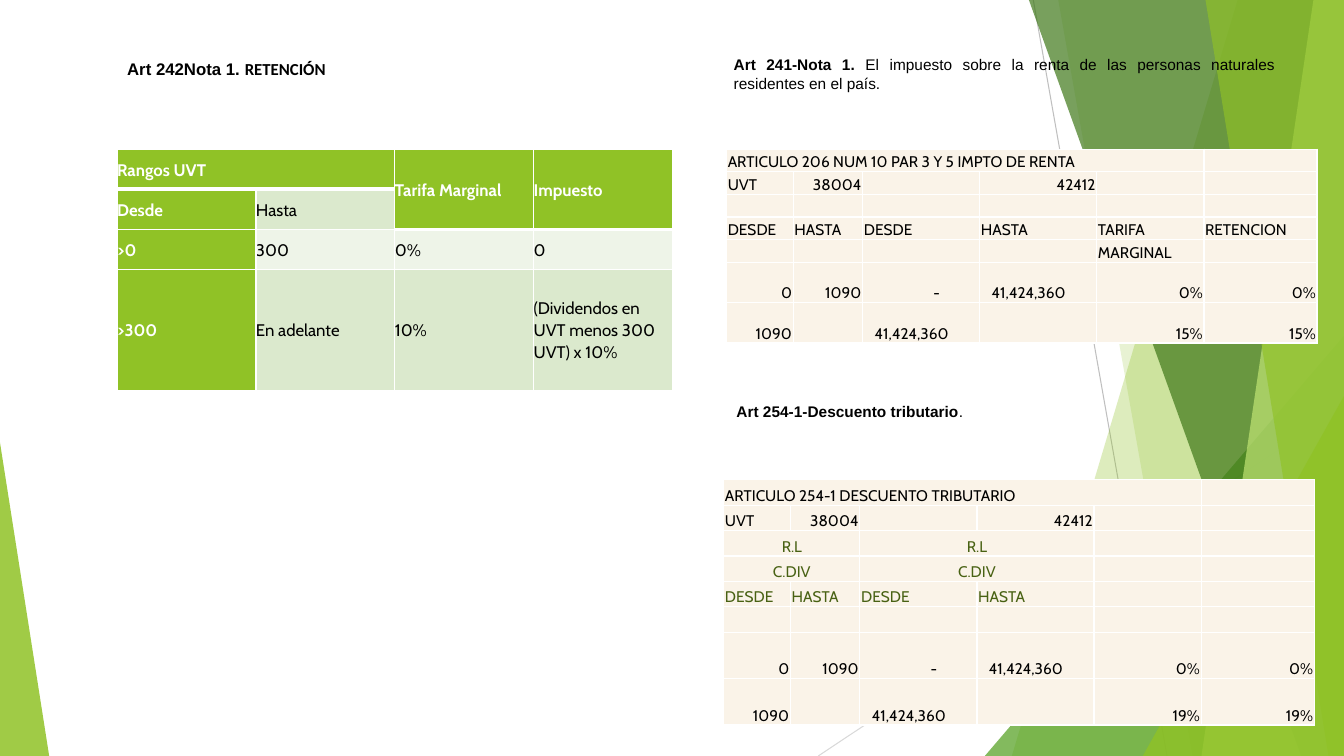
"""Builds the slide on dividend withholding, income tax and tax discount tables."""
from lxml.etree import SubElement
from pptx import Presentation
from pptx.dml.color import RGBColor
from pptx.enum.shapes import MSO_CONNECTOR, MSO_SHAPE
from pptx.enum.text import MSO_ANCHOR, MSO_AUTO_SIZE, PP_ALIGN
from pptx.oxml.ns import qn
from pptx.util import Cm, Pt

HEX = {"lime": "90C226", "leaf": "54A021", "moss": "3F7819", "pale": "C0E474",
       "gray": "BFBFBF", "mist": "D9D9D9", "cream": "FAF3E8", "mint": "DBE9CD",
       "ice": "EEF4E8", "olive": "486113", "white": "FFFFFF", "black": "000000"}
WIDE, HIGH = 33.87, 19.05

RAYS = [((26.04, 0), (29.41, HIGH), "gray"), ((WIDE, 10.24), (20.62, HIGH), "mist")]
FACETS = [
    ("band", (31.19, 25.5), "lime", 30),
    ("band", (26.67, 30.05), "lime", 20),
    ("peak", (24.82, 8.46, 9.05, 1), "leaf", 72),
    ("band", (25.93, 32.79), "moss", 70),
    ("band", (33.1, 30.28), "pale", 70),
    ("band", (30.38, 33.48), "lime", 65),
    ("peak", (28.8, 9.98, 5.07, 1), "lime", 80),
    ("peak", (0, 11.15, 1.24, 0), "lime", 85),
]

TITLE = [("Art 242Nota 1. ", True, "Arial"), ("RETENCIÓN", True, "Calibri")]
NOTES = [
    ((18.24, 1.27, 14.15, 1.19),
     [("Art 241-Nota 1. ", True, "Arial"),
      ("El impuesto sobre la renta de las personas naturales residentes en el país.",
       False, "Arial")]),
    ((18.31, 10.01, 14.48, 0.74),
     [("Art 254-1-Descuento tributario", True, "Arial"), (".", False, "Arial")]),
]

RATES = [
    ("Rangos UVT", "", "Tarifa Marginal", "Impuesto"),
    ("Desde", "Hasta", "", ""),
    (">0", "300", "0%", "0"),
    (">300", "En adelante", "10%", "(Dividendos en UVT menos 300 UVT) x 10%"),
]
UVT = ("UVT", "38004", "", "42412", "", "")
BLANK = ("",) * 6
FIRST = ("0", "1090", "-", "41,424,360", "0%", "0%")
INCOME = [
    ("ARTICULO 206 NUM 10 PAR 3 Y 5 IMPTO DE RENTA",) + BLANK[1:],
    UVT,
    BLANK,
    ("DESDE", "HASTA", "DESDE", "HASTA", "TARIFA", "RETENCION"),
    ("", "", "", "", "MARGINAL", ""),
    FIRST,
    ("1090", "", "41,424,360", "", "15%", "15%"),
]
CREDIT = [
    ("ARTICULO 254-1 DESCUENTO TRIBUTARIO",) + BLANK[1:],
    UVT,
    ("R.L", "", "R.L", "", "", ""),
    ("C.DIV", "", "C.DIV", "", "", ""),
    ("DESDE", "HASTA", "DESDE", "HASTA", "", ""),
    BLANK,
    FIRST,
    ("1090", "", "41,424,360", "", "19%", "19%"),
]
COLS = [1.68, 1.75, 2.95, 2.95, 2.7, 2.85]


def tone(name):
    return RGBColor.from_string(HEX[name])


def paint(shape, name, alpha):
    shape.shadow.inherit = False
    shape.line.fill.background()
    shape.fill.solid()
    shape.fill.fore_color.rgb = tone(name)
    clr = shape.fill._xPr.find(qn("a:solidFill"))[0]
    SubElement(clr, qn("a:alpha")).set("val", str(alpha * 1000))


def draw_ray(start, end, name):
    ray = slide.shapes.add_connector(
        MSO_CONNECTOR.STRAIGHT, *[Cm(v) for v in start + end])
    ray.line.color.rgb = tone(name)
    ray.line.width = Pt(0.75)
    SubElement(ray._element.spPr, qn("a:effectLst"))


def draw_facet(kind, place, name, alpha):
    if kind == "band":
        top, low = place
        pen = slide.shapes.build_freeform(Cm(top), 0)
        pen.add_line_segments([(Cm(x), Cm(y)) for x, y in
                               ((WIDE, 0), (WIDE, HIGH), (low, HIGH))])
        shape = pen.convert_to_shape()
    else:
        left, top, width, tip = place
        shape = slide.shapes.add_shape(MSO_SHAPE.ISOSCELES_TRIANGLE, Cm(left),
                                       Cm(top), Cm(width), Cm(HIGH - top))
        shape.adjustments[0] = tip
    paint(shape, name, alpha)


def write(frame, runs, size):
    frame.word_wrap = True
    para = frame.paragraphs[0]
    para.alignment = PP_ALIGN.JUSTIFY
    para.font.size = Pt(size)
    para.font.color.rgb = tone("black")
    for text, bold, face in runs:
        run = para.add_run()
        run.text = text
        run.font.bold = bold
        run.font.name = face


def edge(cell, widths):
    props = cell._tc.get_or_add_tcPr()
    for side, width in zip("LRTB", widths):
        line = SubElement(props, qn("a:ln" + side), w=str(Pt(width)))
        fill = SubElement(line, qn("a:solidFill"))
        SubElement(fill, qn("a:srgbClr"), val=HEX["white"])


def style_rate(row, col, text):
    head = row == 0 or col == 0 or (row == 1 and col > 1)
    back = "lime" if head else "ice" if row == 2 else "mint"
    return back, "white" if head else "black", head, PP_ALIGN.LEFT, 0


def style_sum(row, col, text):
    ink = "olive" if text in ("R.L", "C.DIV") else "black"
    align = PP_ALIGN.CENTER if ink == "olive" else PP_ALIGN.LEFT
    if text.rstrip("%").isdigit():
        align = PP_ALIGN.RIGHT
    gap = 1.78 if text == "-" else 0.3 if "," in text else 0.03
    return "cream", ink, False, align, gap


def style_credit(row, col, text):
    back, ink, bold, align, gap = style_sum(row, col, text)
    return back, "olive" if row == 4 else ink, bold, align, gap


def heavy(row, col):
    return row == 0 or (row == 1 and col > 1)


def draw_table(rows, left, top, cols, highs, spans, style, size):
    rates = rows is RATES
    table = slide.shapes.add_table(len(rows), len(cols), Cm(left), Cm(top),
                                   Cm(sum(cols)), Cm(sum(highs))).table
    table.first_row = table.horz_banding = False
    for part, width in zip(table.columns, cols):
        part.width = Cm(width)
    for part, high in zip(table.rows, highs):
        part.height = Cm(high)
    for r, line in enumerate(rows):
        for c, text in enumerate(line):
            back, ink, bold, align, gap = style(r, c, text)
            cell = table.cell(r, c)
            above = 3 if rates and r and heavy(r - 1, c) else 1
            below = 3 if rates and heavy(r, c) else 1
            edge(cell, (1, 1, above, below))
            cell.fill.solid()
            cell.fill.fore_color.rgb = tone(back)
            cell.margin_left = Cm(gap)
            cell.margin_right = cell.margin_top = Cm(0 if rates else 0.03)
            cell.margin_bottom = 0
            cell.vertical_anchor = MSO_ANCHOR.MIDDLE if rates else MSO_ANCHOR.BOTTOM
            para = cell.text_frame.paragraphs[0]
            para.alignment = align
            para.line_spacing = 1.07 if rates else 1.0
            para.font.name = "Cabin"
            para.font.size = Pt(size)
            para.font.bold = bold
            para.font.color.rgb = tone(ink)
            if text:
                para.add_run().text = text
            else:
                para._p.get_or_add_endParaRPr().set("sz", str(size * 100))
    for r, c, last, end in spans:
        table.cell(r, c).merge(table.cell(last, end))


deck = Presentation()
deck.slide_width, deck.slide_height = Cm(WIDE), Cm(HIGH)
slide = deck.slides.add_slide(deck.slide_layouts[5])

for ray in RAYS:
    draw_ray(*ray)
for facet in FACETS:
    draw_facet(*facet)

title = slide.shapes.title
title.left, title.top, title.width, title.height = Cm(2.95), Cm(1.35), Cm(14.55), Cm(0.77)
title.text_frame.auto_size = MSO_AUTO_SIZE.NONE
title.text_frame.vertical_anchor = MSO_ANCHOR.MIDDLE
write(title.text_frame, TITLE, 12)
for box, runs in NOTES:
    write(slide.shapes.add_textbox(*[Cm(v) for v in box]).text_frame, runs, 11)

draw_table(RATES, 2.95, 3.76, [3.5] * 4, [1.01] * 3 + [3.04],
           [(0, 0, 0, 1), (0, 2, 1, 2), (0, 3, 1, 3)], style_rate, 12)
draw_table(INCOME, 18.31, 3.76, COLS, [0.57] * 5 + [1.02] * 2,
           [(0, 0, 0, 4)], style_sum, 11)
draw_table(CREDIT, 18.24, 12.09, COLS, [0.64] * 6 + [1.17] * 2,
           [(0, 0, 0, 4)] + [(r, c, r, c + 1) for r in (2, 3) for c in (0, 2)],
           style_credit, 11)

deck.save("out.pptx")
